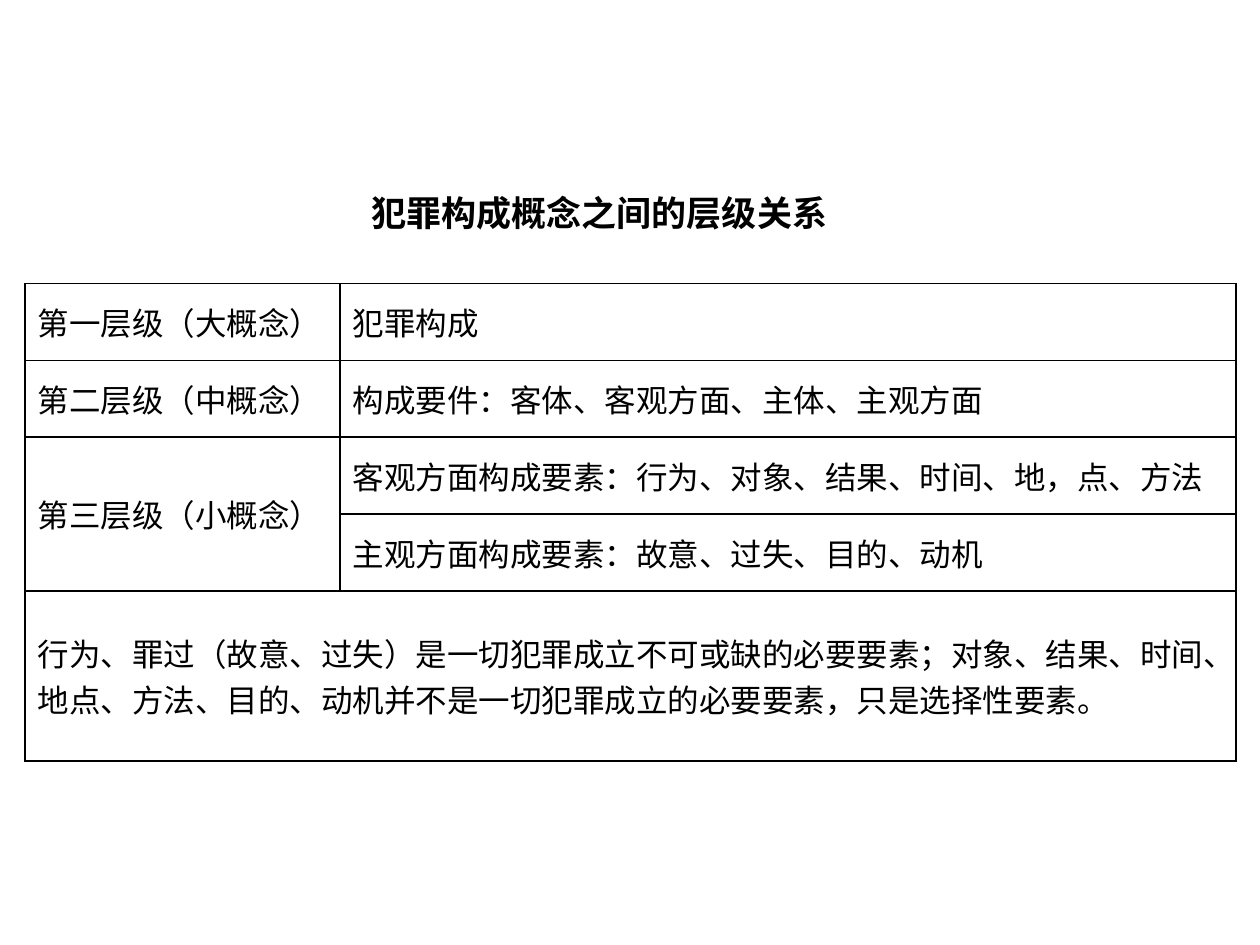
import pptx
import pptx.util
import pptx.dml.color
import pptx.enum.text
import pptx.oxml
import pptx.oxml.ns
from lxml import etree

Inches, Pt = pptx.util.Inches, pptx.util.Pt
FONT = "Noto Sans CJK SC"
COLORS = {"ink": "000000", "paper": "FFFFFF"}


def write(frame, text, size=18, bold=False, color="ink"):
    run = frame.paragraphs[0].add_run()
    run.text = text
    font = run.font
    font.size, font.bold, font.name = Pt(size), bold, FONT
    font.color.rgb = pptx.dml.color.RGBColor.from_string(COLORS[color])
    east = etree.SubElement(font._element, pptx.oxml.ns.qn("a:ea"))
    east.set("typeface", FONT)


def border(cell, width=1, color="ink"):
    """Draw a solid line on all four sides; called before the cell is filled."""
    props = cell._tc.get_or_add_tcPr()
    for side in ("L", "R", "T", "B"):
        props.append(pptx.oxml.parse_xml(
            f'<a:ln{side} {pptx.oxml.ns.nsdecls("a")} w="{Pt(width)}">'
            f'<a:solidFill><a:srgbClr val="{COLORS[color]}"/></a:solidFill>'
            f'</a:ln{side}>'))


deck = pptx.Presentation()
deck.slide_width, deck.slide_height = Inches(10), Inches(7.5)
slide = deck.slides.add_slide(deck.slide_layouts[6])

# Table of levels
cols = [2.5, 7.11]
rows = [0.61] * 4 + [1.35]
texts = [
    ["第一层级（大概念）", "犯罪构成"],
    ["第二层级（中概念）", "构成要件：客体、客观方面、主体、主观方面"],
    ["第三层级（小概念）", "客观方面构成要素：行为、对象、结果、时间、地，点、方法"],
    ["", "主观方面构成要素：故意、过失、目的、动机"],
    ["行为、罪过（故意、过失）是一切犯罪成立不可或缺的必要要素；对象、结果、时间、"
     "地点、方法、目的、动机并不是一切犯罪成立的必要要素，只是选择性要素。", ""],
]
table = slide.shapes.add_table(
    len(rows), len(cols), Inches(0.2), Inches(2.25),
    Inches(sum(cols)), Inches(sum(rows))).table
table.first_row = table.horz_banding = False
for col, width in zip(table.columns, cols):
    col.width = Inches(width)
for row, height in zip(table.rows, rows):
    row.height = Inches(height)
table.cell(2, 0).merge(table.cell(3, 0))
table.cell(4, 0).merge(table.cell(4, 1))

for r, line in enumerate(texts):
    for c, text in enumerate(line):
        cell = table.cell(r, c)
        border(cell)
        cell.fill.solid()
        cell.fill.fore_color.rgb = pptx.dml.color.RGBColor.from_string(COLORS["paper"])
        cell.vertical_anchor = pptx.enum.text.MSO_ANCHOR.MIDDLE
        if text:
            write(cell.text_frame, text)

# Title
title = slide.shapes.add_textbox(Inches(2.85), Inches(1.47), Inches(3.87), Inches(0.44))
title.text_frame.word_wrap = False
title.text_frame.auto_size = pptx.enum.text.MSO_AUTO_SIZE.SHAPE_TO_FIT_TEXT
write(title.text_frame, "犯罪构成概念之间的层级关系", size=20, bold=True)

deck.save("out.pptx")
